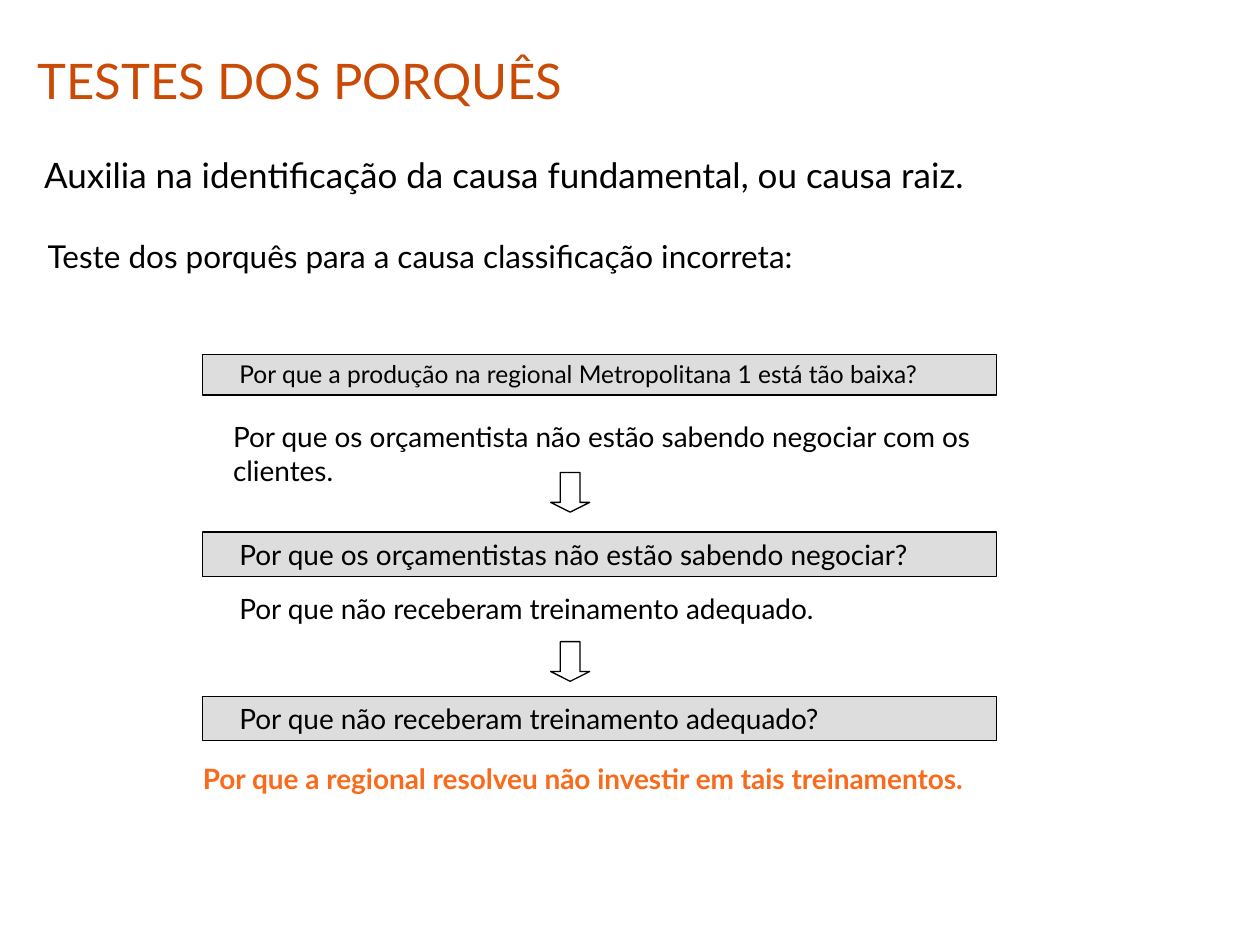
from pptx import Presentation
from pptx.dml.color import RGBColor
from pptx.enum.shapes import MSO_SHAPE as SHAPE
from pptx.enum.text import MSO_ANCHOR as ANCHOR, MSO_AUTO_SIZE as AUTO, PP_ALIGN as ALIGN
from pptx.util import Inches, Pt

prs = Presentation()
prs.slide_width, prs.slide_height = Inches(10), Inches(7.5)
s = prs.slides.add_slide(prs.slide_layouts[5])


def box(*shares):
    """Left, top, width and height from percentages of the slide's size."""
    sizes = (prs.slide_width, prs.slide_height) * 2
    return [int(size * share / 100) for size, share in zip(sizes, shares)]


def write(sp, text, size, color="000000", bold=False, inset=0.0, anchor=ANCHOR.TOP):
    tf = sp.text_frame
    tf.text = text
    tf.word_wrap = True
    tf.auto_size = AUTO.NONE
    tf.vertical_anchor = anchor
    tf.margin_left, tf.margin_right = Inches(inset), 0
    tf.margin_top = tf.margin_bottom = Inches(0.04)
    p = tf.paragraphs[0]
    p.alignment = ALIGN.LEFT
    p.font.name, p.font.size, p.font.bold = "Lato", Pt(size), bold
    p.font.color.rgb = RGBColor.from_string(color)


# Title
title = s.shapes.title
title.left, title.top, title.width, title.height = box(2, 1.7, 98, 13.5)
write(title, "TESTES DOS PORQUÊS", 28, "CA4B05", inset=0.1, anchor=ANCHOR.MIDDLE)

# Introduction
intro = s.shapes.add_textbox(*box(-4.3, 15.7, 95.3, 5.6))
write(intro, "Auxilia na identificação da causa fundamental, ou causa raiz.", 20, inset=0.78)
lead = s.shapes.add_textbox(*box(2.8, 22.1, 97.2, 10))
write(lead, "Teste dos porquês para a causa classificação incorreta:", 18,
      inset=0.1, anchor=ANCHOR.MIDDLE)

# Chain of questions and answers
LEFT, WIDTH = 16.1, 63
questions = [
    (37.5, 4.3, 14, "Por que a produção na regional Metropolitana 1 está tão baixa?"),
    (56.3, 4.7, 16, "Por que os orçamentistas não estão sabendo negociar?"),
    (73.7, 4.7, 16, "Por que não receberam treinamento adequado?"),
]
answers = [
    (18.5, 43.9, 59.1, 8.3, 0, "000000",
     "Por que os orçamentista não estão sabendo negociar com os clientes."),
    (LEFT, 62.1, WIDTH, 4.7, 0.29, "000000",
     "Por que não receberam treinamento adequado."),
    (LEFT, 80, 66.9, 4.7, 0, "F96A1B",
     "Por que a regional resolveu não investir em tais treinamentos."),
]
outlined = []
for top, height, size, text in questions:
    sp = s.shapes.add_shape(SHAPE.RECTANGLE, *box(LEFT, top, WIDTH, height))
    write(sp, text, size, inset=0.29)
    outlined.append((sp, "DDDDDD"))

for left, top, width, height, inset, color, text in answers:
    sp = s.shapes.add_textbox(*box(left, top, width, height))
    write(sp, text, 16, color, bold=color != "000000", inset=inset)

# Arrows from each answer to the next question
for top in (50, 67.9):
    sp = s.shapes.add_shape(SHAPE.DOWN_ARROW, *box(43.7, top, 3.1, 4.2))
    sp.adjustments[0], sp.adjustments[1] = 0.5, 0.25
    outlined.append((sp, "FFFFFF"))

# Fill and outline of the shapes
for sp, fill in outlined:
    sp.shadow.inherit = False
    sp.fill.solid()
    sp.fill.fore_color.rgb = RGBColor.from_string(fill)
    sp.line.color.rgb = RGBColor.from_string("000000")
    sp.line.width = Pt(0.75)

prs.save("out.pptx")
